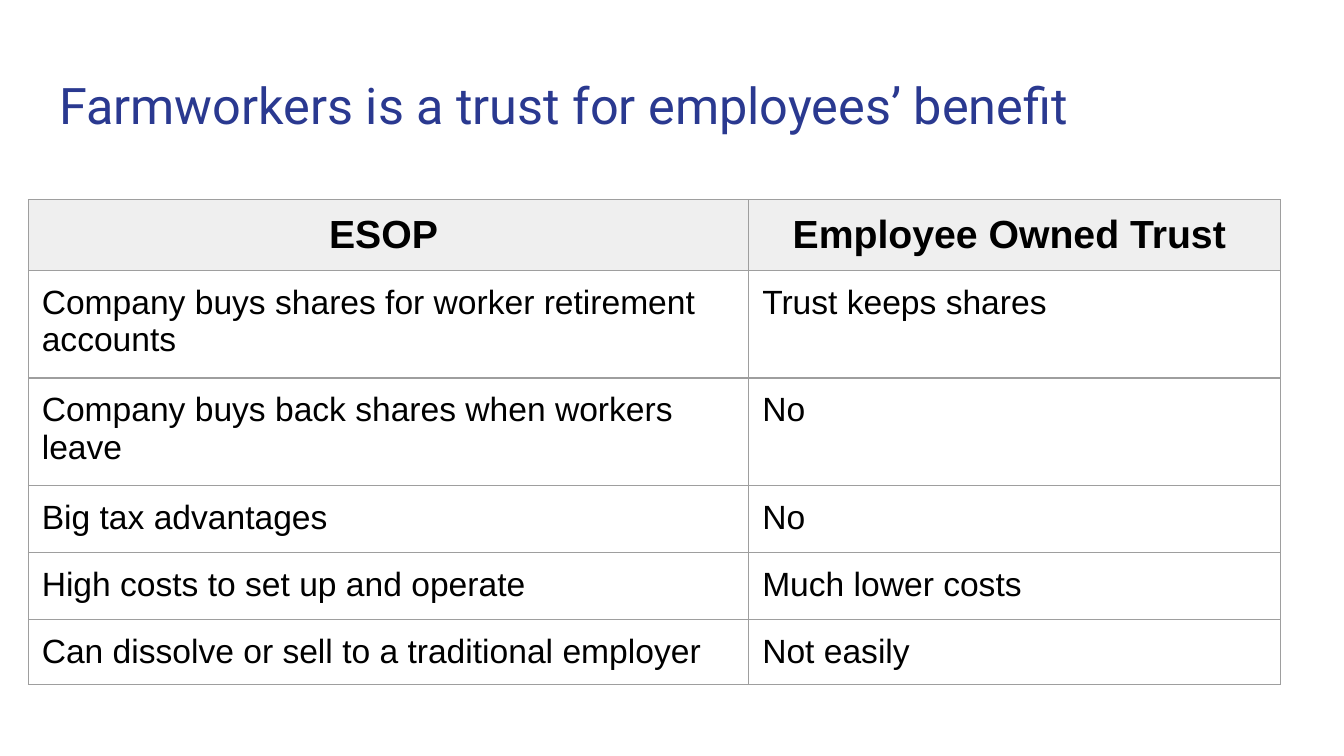
from pptx import Presentation
from pptx.dml.color import RGBColor
from pptx.enum.text import MSO_ANCHOR, PP_ALIGN
from pptx.oxml import parse_xml
from pptx.oxml.ns import nsdecls
from pptx.util import Pt

ROWS = [
    ("ESOP ", "Employee Owned Trust "),
    ("Company buys shares for worker retirement accounts", "Trust keeps shares"),
    ("Company buys back shares when workers leave", "No"),
    ("Big tax advantages", "No"),
    ("High costs to set up and operate", "Much lower costs"),
    ("Can dissolve or sell to a traditional employer", "Not easily"),
]
WIDTHS = [386, 285]
HEIGHTS = [36, 57.6, 57.6, 36, 36, 30.24]


def color(code):
    return RGBColor.from_string(code)


def apply(item, values):
    for name, value in values.items():
        setattr(item, name, value)


class Deck:
    blue, black, gray, rule = "2A3990", "000000", "EFEFEF", "9E9E9E"
    title_font = {"name": "Roboto", "size": Pt(27), "bold": False}
    head_font = {"name": "Arial", "size": Pt(21), "bold": True}
    body_font = {"name": "Arial", "size": Pt(18), "bold": False}
    inset = {f"margin_{side}": Pt(7.2) for side in ("left", "right", "top", "bottom")}

    def __init__(self, show):
        self.slide = show.slides.add_slide(show.slide_layouts[5])

    def label(self, frame, text, font, code, align=PP_ALIGN.LEFT):
        para = frame.paragraphs[0]
        para.alignment = align
        run = para.add_run()
        run.text = text
        apply(run.font, font)
        run.font.color.rgb = color(code)

    def title(self, text, left, top, width, height):
        shape = self.slide.shapes.title
        apply(shape, {"left": Pt(left), "top": Pt(top),
                      "width": Pt(width), "height": Pt(height)})
        frame = shape.text_frame
        apply(frame, {"word_wrap": True, "vertical_anchor": MSO_ANCHOR.MIDDLE, **self.inset})
        self.label(frame, text, self.title_font, self.blue)

    def border(self, cell):
        props = cell._tc.get_or_add_tcPr()
        for side in "LRTB":
            props.append(parse_xml(
                f'<a:ln{side} {nsdecls("a")} w="{Pt(0.75)}"><a:solidFill>'
                f'<a:srgbClr val="{self.rule}"/></a:solidFill></a:ln{side}>'))

    def cell(self, cell, text, head):
        apply(cell, {"vertical_anchor": MSO_ANCHOR.TOP, **self.inset})
        self.border(cell)
        if head:
            cell.fill.solid()
            cell.fill.fore_color.rgb = color(self.gray)
            self.label(cell.text_frame, text, self.head_font, self.black, PP_ALIGN.CENTER)
        else:
            cell.fill.background()
            self.label(cell.text_frame, text, self.body_font, self.black)

    def table(self, rows, left, top, widths, heights):
        table = self.slide.shapes.add_table(
            len(rows), len(widths), Pt(left), Pt(top),
            Pt(sum(widths)), Pt(sum(heights))).table
        table.horz_banding = False
        for col, width in zip(table.columns, widths):
            col.width = Pt(width)
        for row, height in zip(table.rows, heights):
            row.height = Pt(height)
        for r, texts in enumerate(rows):
            for c, text in enumerate(texts):
                self.cell(table.cell(r, c), text, r == 0)


def main():
    show = Presentation()
    apply(show, {"slide_width": Pt(720), "slide_height": Pt(405)})
    deck = Deck(show)
    deck.title("Farmworkers is a trust for employees’ benefit", 24.5, 32.4, 671, 47.5)
    deck.table(ROWS, 15.2, 107, WIDTHS, HEIGHTS)
    show.save("out.pptx")


if __name__ == "__main__":
    main()
